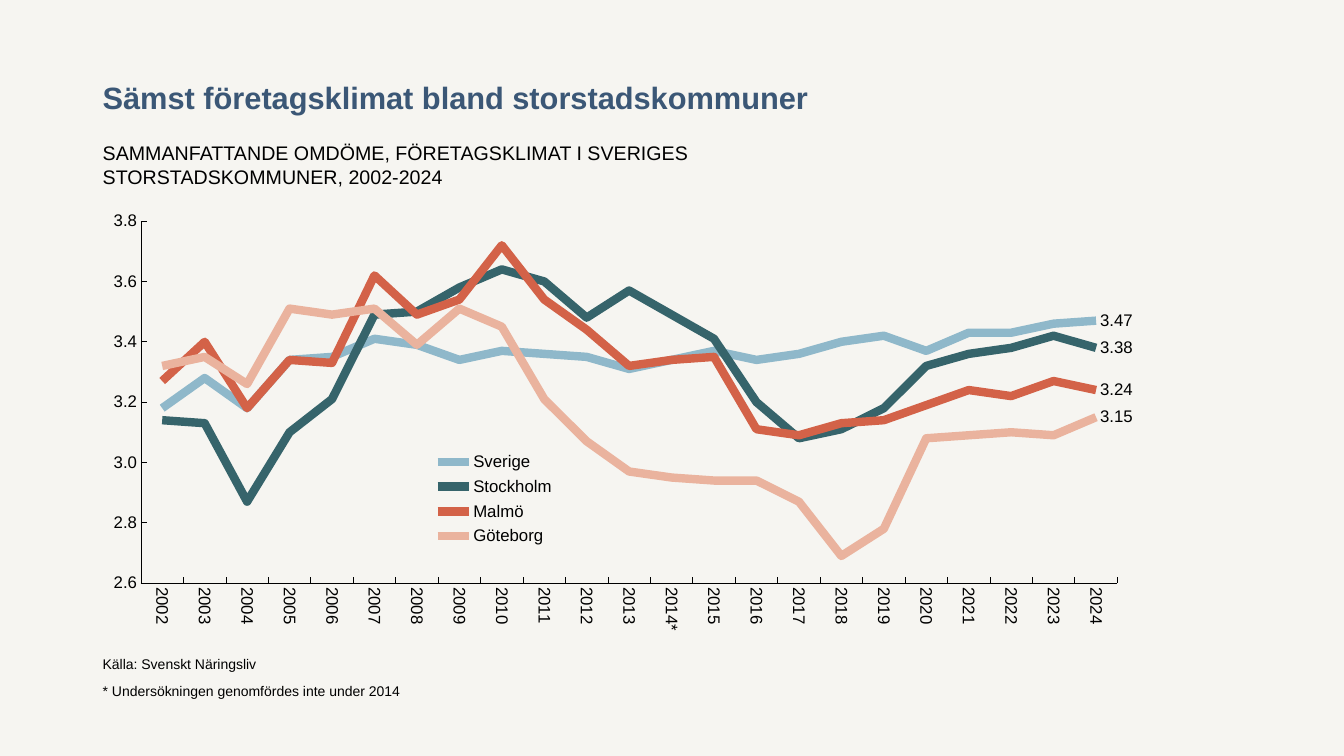
from dataclasses import dataclass

from lxml import etree
from pptx import Presentation
from pptx import util as u
from pptx.chart import data
from pptx.dml import color
from pptx.enum import chart as kinds, text
from pptx.oxml import ns


@dataclass(frozen=True)
class Theme:
    """Colours, font and type sizes of the slide."""
    font: str = "Arial"
    background: str = "F6F5F1"
    heading: str = "3B5776"
    ink: str = "000000"
    title_size: int = 22
    subtitle_size: int = 14
    chart_size: int = 12
    note_size: int = 10


THEME = Theme()
YEARS = [f"{year}*" if year == 2014 else str(year) for year in range(2002, 2025)]
CITIES = {
    "Sverige": ("8FB8CA", [
        3.18, 3.28, 3.18, 3.34, 3.35, 3.41, 3.39, 3.34, 3.37, 3.36, 3.35, 3.31,
        3.34, 3.37, 3.34, 3.36, 3.40, 3.42, 3.37, 3.43, 3.43, 3.46, 3.47]),
    "Stockholm": ("36646B", [
        3.14, 3.13, 2.87, 3.10, 3.21, 3.49, 3.50, 3.58, 3.64, 3.60, 3.48, 3.57,
        3.49, 3.41, 3.20, 3.08, 3.11, 3.18, 3.32, 3.36, 3.38, 3.42, 3.38]),
    "Malmö": ("D36248", [
        3.27, 3.40, 3.18, 3.34, 3.33, 3.62, 3.49, 3.54, 3.72, 3.54, 3.44, 3.32,
        3.34, 3.35, 3.11, 3.09, 3.13, 3.14, 3.19, 3.24, 3.22, 3.27, 3.24]),
    "Göteborg": ("EAB39E", [
        3.32, 3.35, 3.26, 3.51, 3.49, 3.51, 3.39, 3.51, 3.45, 3.21, 3.07, 2.97,
        2.95, 2.94, 2.94, 2.87, 2.69, 2.78, 3.08, 3.09, 3.10, 3.09, 3.15]),
}


def rgb(value):
    """Turn a hex string into a colour."""
    return color.RGBColor.from_string(value)


def add_text(page, place, words, size, ink=THEME.ink, bold=False,
             anchor=text.MSO_ANCHOR.TOP, spacing=None):
    """Add a one-paragraph text box."""
    box = page.shapes.add_textbox(*map(u.Inches, place))
    frame = box.text_frame
    frame.word_wrap = True
    frame.vertical_anchor = anchor
    para = frame.paragraphs[0]
    para.text = words
    para.line_spacing = spacing
    para.font.name = THEME.font
    para.font.size = u.Pt(size)
    para.font.bold = bold
    para.font.color.rgb = rgb(ink)


def set_layout(part, place, inner=False):
    """Give a chart part a manual position in fractions of the chart."""
    for old in part.findall(ns.qn("c:layout")):
        part.remove(old)
    layout = etree.Element(ns.qn("c:layout"))
    manual = etree.SubElement(layout, ns.qn("c:manualLayout"))
    settings = [("layoutTarget", "inner")] if inner else []
    settings += [("xMode", "edge"), ("yMode", "edge"), *zip("xywh", place)]
    for tag, value in settings:
        etree.SubElement(manual, ns.qn(f"c:{tag}")).set("val", str(value))
    entry = part.find(ns.qn("c:legendPos"))
    if entry is None:
        part.insert(0, layout)
    else:
        entry.addnext(layout)


def style_axis(axis):
    """Draw an axis as a thin line with inside ticks and no grid."""
    axis.has_major_gridlines = False
    axis.major_tick_mark = kinds.XL_TICK_MARK.INSIDE
    axis.minor_tick_mark = kinds.XL_TICK_MARK.NONE
    axis.format.line.color.rgb = rgb(THEME.ink)
    axis.format.line.width = u.Pt(0.5)
    axis.tick_labels.font.size = u.Pt(THEME.chart_size)


def style_series(series, ink):
    """Draw a thick plain line with its last value as a label."""
    series.smooth = False
    series.marker.style = kinds.XL_MARKER_STYLE.NONE
    series.format.line.color.rgb = rgb(ink)
    series.format.line.width = u.Pt(6)
    label = series.points[len(YEARS) - 1].data_label
    label.position = kinds.XL_LABEL_POSITION.RIGHT
    label.font.size = u.Pt(THEME.chart_size)


def add_climate_chart(page, place):
    """Add the line chart of business climate per city."""
    figures = data.CategoryChartData(number_format="0.00")
    figures.categories = YEARS
    for name, (_, values) in CITIES.items():
        figures.add_series(name, values)
    chart = page.shapes.add_chart(
        kinds.XL_CHART_TYPE.LINE, *map(u.Inches, place), figures).chart
    chart.has_title = False
    chart.font.name = THEME.font
    chart.font.size = u.Pt(THEME.chart_size)
    chart.font.color.rgb = rgb(THEME.ink)
    plot = chart.plots[0]
    plot.vary_by_categories = False
    for series, (ink, _) in zip(plot.series, CITIES.values()):
        style_series(series, ink)

    years, score = chart.category_axis, chart.value_axis
    style_axis(years)
    style_axis(score)
    years._element.find(f"{ns.qn('c:txPr')}/{ns.qn('a:bodyPr')}").set("rot", "5400000")
    score.minimum_scale, score.maximum_scale, score.major_unit = 2.6, 3.8, 0.2
    score.tick_labels.number_format = "0.0"
    score.tick_labels.number_format_is_linked = False

    chart.has_legend = True
    legend = chart.legend
    legend.position = kinds.XL_LEGEND_POSITION.RIGHT
    legend.include_in_layout = True
    legend.font.size = u.Pt(THEME.chart_size)
    set_layout(legend._element, (0.31, 0.56, 0.13, 0.24))
    plot_area = chart._chartSpace.chart.plotArea
    set_layout(plot_area, (0.045, 0.049, 0.911, 0.822), inner=True)


def main():
    """Build the slide and save it."""
    deck = Presentation()
    deck.slide_width, deck.slide_height = u.Inches(13.33), u.Inches(7.5)
    page = deck.slides.add_slide(deck.slide_layouts[6])
    page.background.fill.solid()
    page.background.fill.fore_color.rgb = rgb(THEME.background)
    bottom = text.MSO_ANCHOR.BOTTOM
    add_text(page, (0.92, 0.4, 11.5, 0.8),
             "Sämst företagsklimat bland storstadskommuner",
             THEME.title_size, THEME.heading, True, bottom, u.Pt(31))
    add_text(page, (0.92, 1.35, 7.89, 0.51),
             "SAMMANFATTANDE OMDÖME, FÖRETAGSKLIMAT I SVERIGES\v"
             "STORSTADSKOMMUNER, 2002-2024", THEME.subtitle_size)
    add_climate_chart(page, (0.92, 1.98, 10.63, 4.37))
    add_text(page, (0.92, 6.45, 10.79, 0.27), "Källa: Svenskt Näringsliv",
             THEME.note_size, anchor=bottom)
    add_text(page, (0.92, 6.72, 3.25, 0.27),
             "* Undersökningen genomfördes inte under 2014", THEME.note_size)
    deck.save("out.pptx")


if __name__ == "__main__":
    main()
